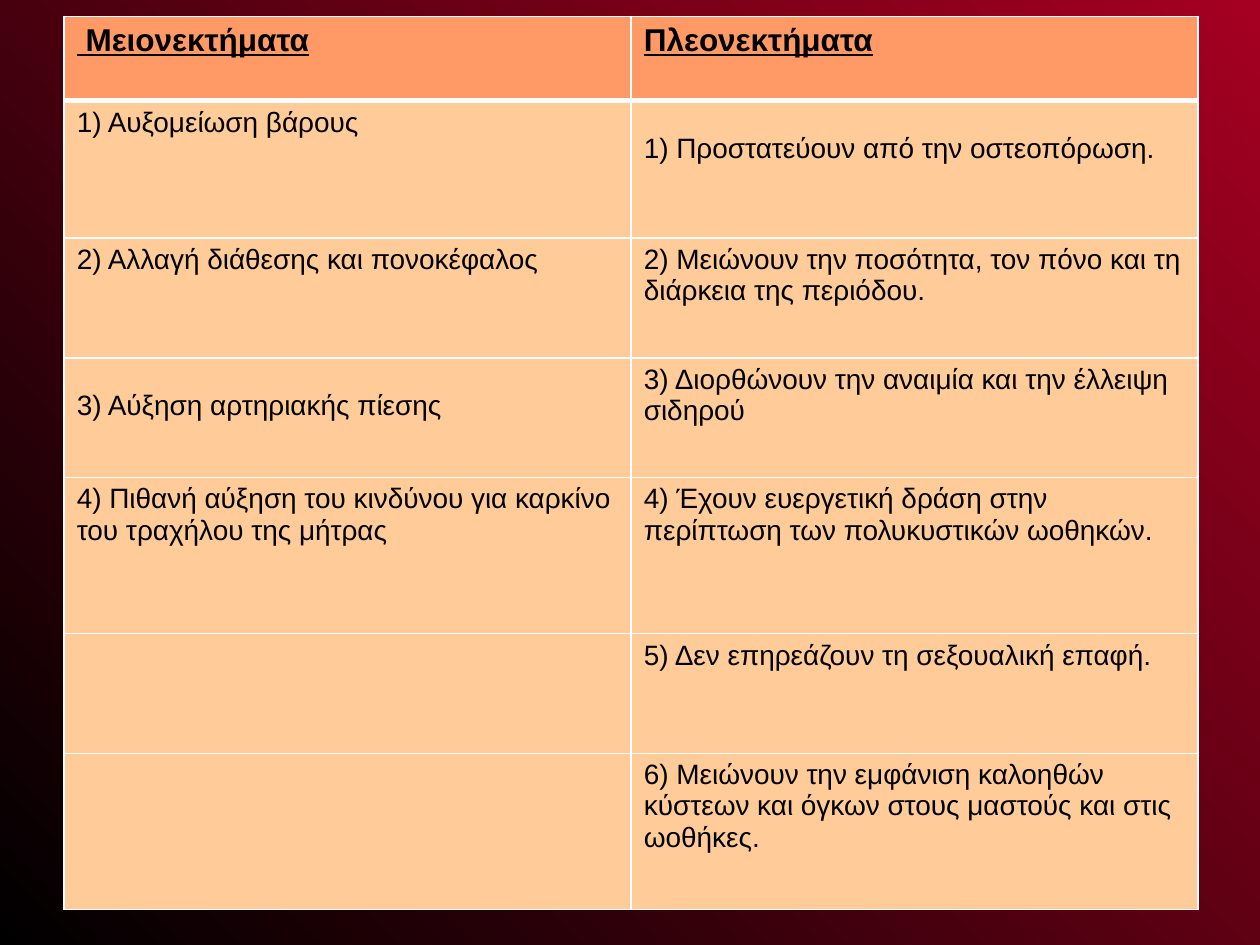
"""Builds a slide with a two-column table of disadvantages and advantages."""
from lxml.etree import SubElement
from pptx import Presentation
from pptx.dml.color import RGBColor
from pptx.oxml.ns import qn
from pptx.util import Inches, Pt

BLACK = RGBColor(0x00, 0x00, 0x00)
CRIMSON = RGBColor(0xA5, 0x00, 0x21)
ORANGE = RGBColor(0xFF, 0x99, 0x66)
PEACH = RGBColor(0xFF, 0xCC, 0x99)
WHITE = RGBColor(0xFF, 0xFF, 0xFF)

ROWS = [
    (0.67, " Μειονεκτήματα", "Πλεονεκτήματα"),
    (1.09, "1) Αυξομείωση βάρους", "1) Προστατεύουν από την οστεοπόρωση."),
    (0.95, "2) Αλλαγή διάθεσης και πονοκέφαλος",
     "2) Μειώνουν την ποσότητα, τον πόνο και τη διάρκεια της περιόδου."),
    (0.95, "3) Αύξηση αρτηριακής πίεσης",
     "3) Διορθώνουν την αναιμία και την έλλειψη σιδηρού"),
    (1.24, "4) Πιθανή αύξηση του κινδύνου για καρκίνο του τραχήλου της μήτρας",
     "4) Έχουν ευεργετική δράση στην περίπτωση των πολυκυστικών ωοθηκών."),
    (0.95, "", "5) Δεν επηρεάζουν τη σεξουαλική επαφή."),
    (1.24, "", "6) Μειώνουν την εμφάνιση καλοηθών κύστεων και όγκων στους "
               "μαστούς και στις ωοθήκες."),
]
LOWERED_CELLS = {(1, 1), (3, 0)}
LOWERED_MARGIN = 0.26
COLUMN_WIDTH = 4.5


def add_border(cell, side, width):
    line = SubElement(cell._tc.get_or_add_tcPr(), qn(f"a:ln{side}"), w=str(Pt(width)))
    SubElement(SubElement(line, qn("a:solidFill")), qn("a:srgbClr"), val=str(WHITE))


def format_cell(cell, text, row, column):
    is_header = row == 0
    for side in "LRTB":
        thick = (side == "B" and is_header) or (side == "T" and row == 1)
        add_border(cell, side, 3 if thick else 1)
    cell.fill.solid()
    cell.fill.fore_color.rgb = ORANGE if is_header else PEACH
    if (row, column) in LOWERED_CELLS:
        cell.margin_top = Inches(LOWERED_MARGIN)
    cell.text_frame.text = text
    font = cell.text_frame.paragraphs[0].font
    font.name = "Arial"
    font.size = Pt(18 if is_header else 16)
    font.bold = font.underline = is_header
    font.color.rgb = BLACK


def main():
    deck = Presentation()
    deck.slide_width, deck.slide_height = Inches(10), Inches(7.5)
    slide = deck.slides.add_slide(deck.slide_layouts[6])

    backdrop = slide.background.fill
    backdrop.gradient()
    backdrop.gradient_angle = 45
    for stop, color in zip(backdrop.gradient_stops, (BLACK, CRIMSON)):
        stop.color.rgb = color

    height = sum(row[0] for row in ROWS)
    comparison = slide.shapes.add_table(
        len(ROWS), 2, Inches(0.51), Inches(0.13),
        Inches(2 * COLUMN_WIDTH), Inches(height)).table
    comparison.horz_banding = False
    for table_column in comparison.columns:
        table_column.width = Inches(COLUMN_WIDTH)
    for row, (row_height, *texts) in enumerate(ROWS):
        comparison.rows[row].height = Inches(row_height)
        for column, text in enumerate(texts):
            format_cell(comparison.cell(row, column), text, row, column)

    deck.save("out.pptx")


if __name__ == "__main__":
    main()
